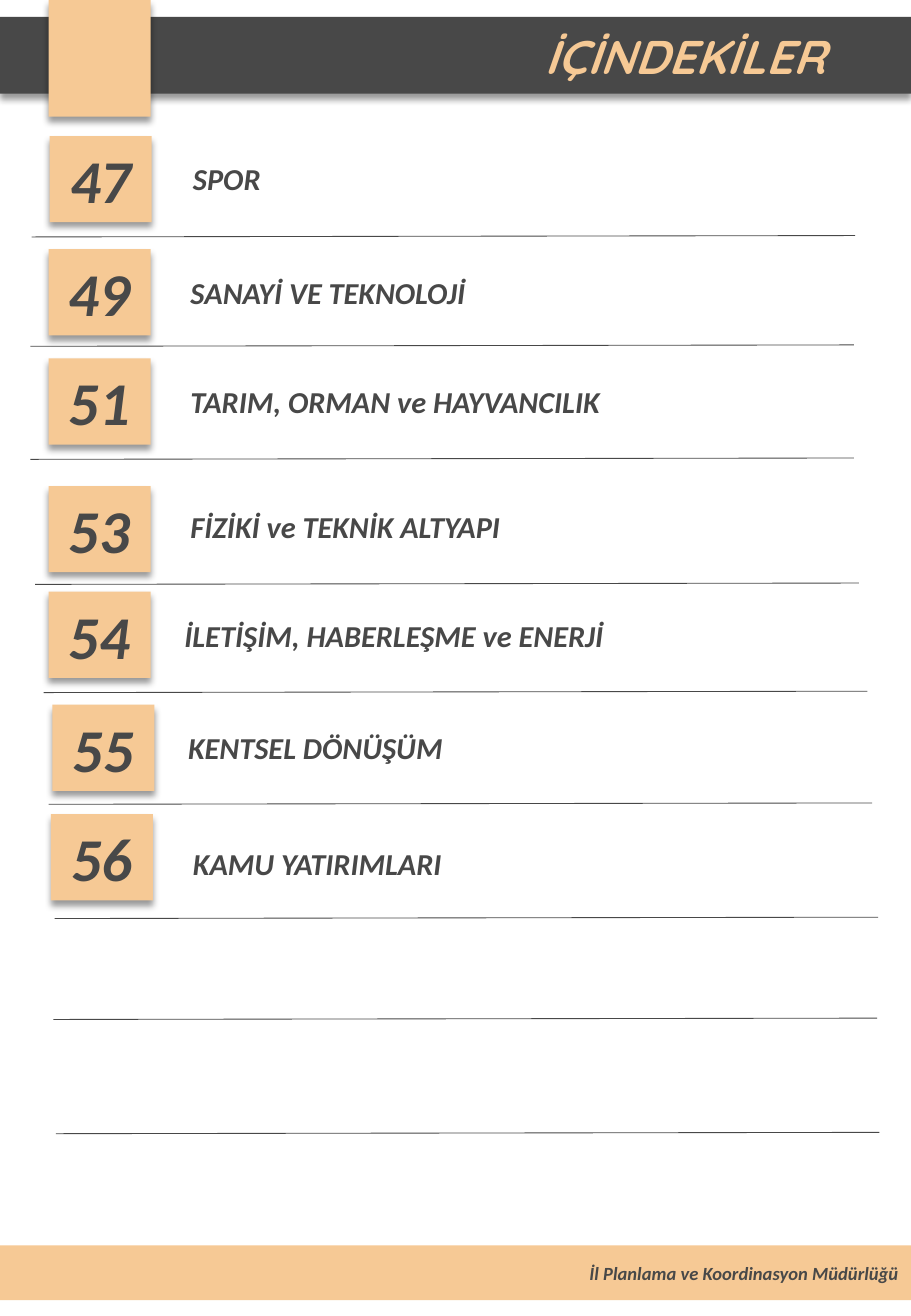
"""Build the contents page with numbered sections, ruled lines and a footer."""
from lxml.etree import SubElement
from pptx import Presentation
from pptx.dml.color import RGBColor
from pptx.enum.shapes import MSO_CONNECTOR as Connector, MSO_SHAPE as Shape
from pptx.enum.text import MSO_ANCHOR as Anchor, MSO_AUTO_SIZE as AutoSize, PP_ALIGN as Align
from pptx.oxml.ns import qn
from pptx.util import Pt

COLORS = {"dark": "484848", "peach": "F6C995", "shadow": "000000"}
PAGE_WIDTH, PAGE_HEIGHT = 540, 779.8
TILE_WIDTH, TILE_HEIGHT = 60.5, 51.1
RULE_WIDTH, RULE_RISE = 488.2, 0.8

# number, tile left, tile top, title, title left, title top, title width
SECTIONS = [
    ("47", 29.5, 80.6, "SPOR", 107.3, 91.4, 151),
    ("49", 28.8, 147.6, "SANAYİ VE TEKNOLOJİ", 105.8, 159.1, 320),
    ("51", 28.8, 212.4, "TARIM, ORMAN ve HAYVANCILIK", 105.8, 223.2, 321),
    ("53", 28.8, 288, "FİZİKİ ve TEKNİK ALTYAPI", 105.8, 297.4, 320),
    ("54", 28.8, 350.6, "İLETİŞİM, HABERLEŞME ve ENERJİ", 102.2, 362.2, 320),
    ("55", 31, 417.6, "KENTSEL DÖNÜŞÜM", 104.4, 428.4, 270),
    ("56", 30.2, 482.4, "KAMU YATIRIMLARI", 107.3, 497.5, 270),
]
RULES = [
    (18.7, 140.4), (18, 205.2), (18, 272.2), (20.9, 346.3), (25.9, 410.4),
    (28.8, 476.6), (32.4, 544.3), (31.7, 604.1), (33.1, 671.8),
]


def rgb(name):
    return RGBColor.from_string(COLORS[name])


def write(box, text, size, align=Align.LEFT, color="dark", font="Calibri"):
    paragraph = box.text_frame.paragraphs[0]
    paragraph.text = text
    paragraph.alignment = align
    span = paragraph.runs[0].font
    span.name, span.size = font, Pt(size)
    span.bold = span.italic = True
    span.color.rgb = rgb(color)


def cast_shadow(box):
    effects = box._element.spPr.find(qn("a:effectLst"))
    shadow = SubElement(effects, qn("a:outerShdw"), blurRad=str(Pt(4)), dist=str(Pt(3)),
                        dir="5400000", algn="t", rotWithShape="0")
    color = SubElement(shadow, qn("a:srgbClr"), val=COLORS["shadow"])
    SubElement(color, qn("a:alpha"), val="40000")


def add_block(page, left, top, width, height, fill="peach", shadow=True):
    box = page.shapes.add_shape(Shape.RECTANGLE, Pt(left), Pt(top), Pt(width), Pt(height))
    box.fill.solid()
    box.fill.fore_color.rgb = rgb(fill)
    box.line.fill.background()
    box.shadow.inherit = False
    if shadow:
        cast_shadow(box)
    box.text_frame.vertical_anchor = Anchor.MIDDLE
    return box


def add_title(page, text, left, top, width):
    box = page.shapes.add_textbox(Pt(left), Pt(top), Pt(width), Pt(29))
    box.text_frame.word_wrap = True
    box.text_frame.auto_size = AutoSize.SHAPE_TO_FIT_TEXT
    write(box, text, 18)


def add_rule(page, left, top):
    rule = page.shapes.add_connector(Connector.STRAIGHT, Pt(left), Pt(top),
                                     Pt(left + RULE_WIDTH), Pt(top - RULE_RISE))
    rule.line.color.rgb = rgb("dark")
    rule.line.width = Pt(0.5)
    SubElement(rule._element.spPr, qn("a:effectLst"))


def main():
    deck = Presentation()
    deck.slide_width, deck.slide_height = Pt(PAGE_WIDTH), Pt(PAGE_HEIGHT)
    page = deck.slides.add_slide(deck.slide_layouts[6])

    header = add_block(page, 0, 10.1, PAGE_WIDTH, 45.4, fill="dark")
    header.text_frame.margin_right = Pt(51)
    write(header, "İÇİNDEKİLER", 28, Align.RIGHT, "peach", "Quicksand")
    add_block(page, 28.8, 0, TILE_WIDTH, 69.1)

    footer = add_block(page, 0, 738, PAGE_WIDTH, 32.4, shadow=False)
    write(footer, "İl Planlama ve Koordinasyon Müdürlüğü", 11, Align.RIGHT)

    for left, top in RULES:
        add_rule(page, left, top)
    for number, left, top, title, title_left, title_top, title_width in SECTIONS:
        tile = add_block(page, left, top, TILE_WIDTH, TILE_HEIGHT)
        write(tile, number, 36, Align.CENTER)
        add_title(page, title, title_left, title_top, title_width)

    deck.save("out.pptx")


if __name__ == "__main__":
    main()
